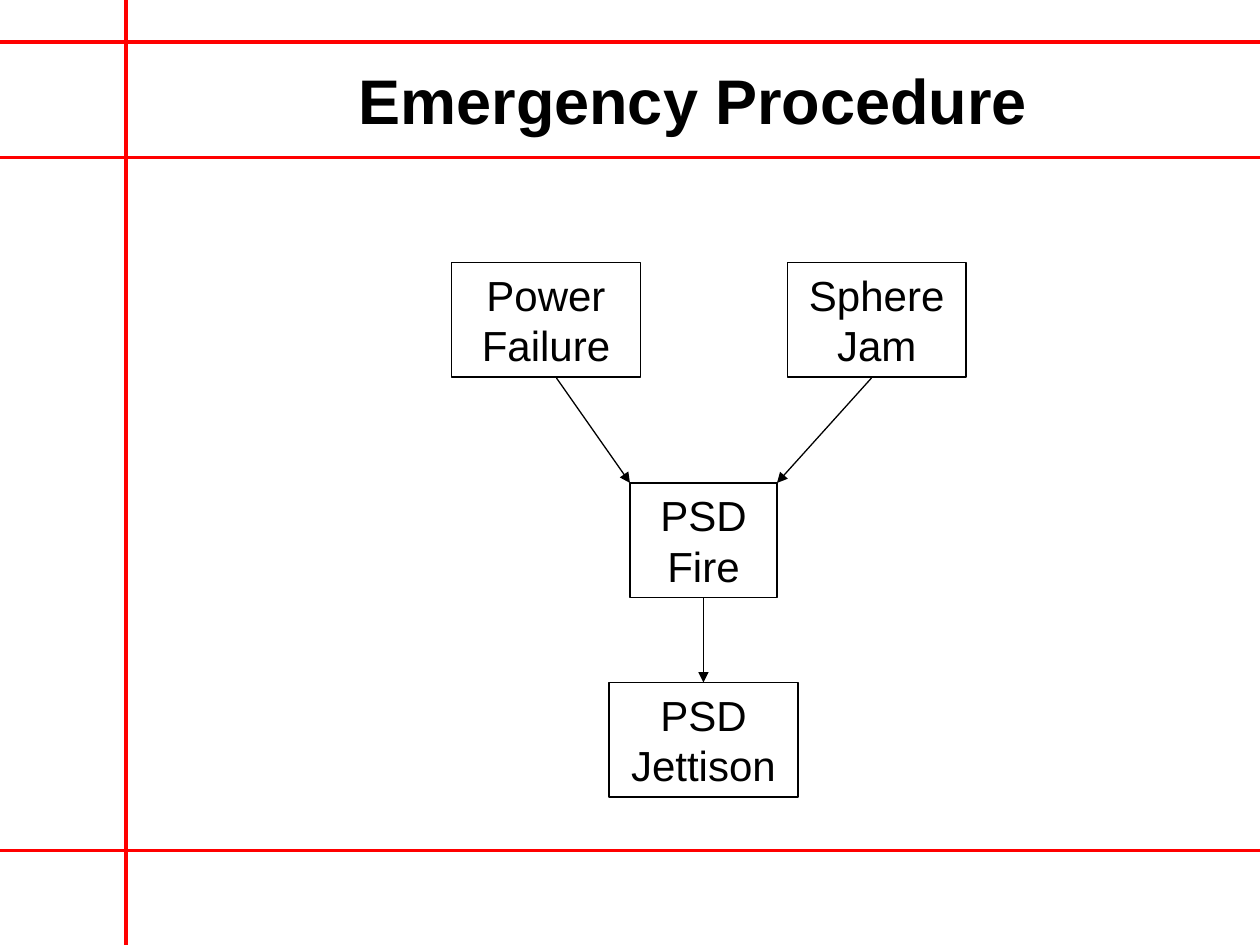
"""Build the Emergency Procedure flowchart slide."""
from lxml.etree import SubElement
from pptx import Presentation
from pptx.dml.color import RGBColor
from pptx.enum.shapes import MSO_CONNECTOR as Connector, MSO_SHAPE as Shape
from pptx.enum.text import MSO_ANCHOR as Anchor, MSO_AUTO_SIZE as AutoSize, PP_ALIGN as Align
from pptx.oxml.ns import qn
from pptx.util import Inches, Pt

THEME = {
    "ink": RGBColor(0, 0, 0),
    "rule": RGBColor(255, 0, 0),
    "title": {"name": "Arial", "size": Pt(36), "bold": True},
    "label": {"name": "Arial", "size": Pt(24), "bold": False},
    "leading": Pt(29),
}
COLUMNS, ROWS = 120, 90

deck = Presentation()
deck.slide_width, deck.slide_height = Inches(10), Inches(7.5)
CELL = deck.slide_width // COLUMNS
page = deck.slides.add_slide(deck.slide_layouts[5])


def add_line(start, end, color, width):
    line = page.shapes.add_connector(
        Connector.STRAIGHT, *(round(CELL * step) for step in (*start, *end)))
    line.line.color.rgb = color
    line.line.width = Pt(width)
    SubElement(line._element.spPr, qn("a:effectLst"))
    return line


def write_text(box, text, style, frame_format, para_format):
    frame = box.text_frame
    para = frame.paragraphs[0]
    span = para.add_run()
    span.text = text
    span.font.color.rgb = THEME["ink"]
    for target, values in ((frame, frame_format), (para, para_format), (span.font, style)):
        for name, value in values.items():
            setattr(target, name, value)


for row in (15, 81, 4):
    add_line((0, row), (COLUMNS, row), THEME["rule"], 2.25)
add_line((12, ROWS), (12, 0), THEME["rule"], 2.25)

title = page.shapes.title
title.left, title.top, title.width, title.height = (CELL * step for step in (12, 4, 108, 11))
write_text(title, "Emergency Procedure", THEME["title"],
           {"vertical_anchor": Anchor.MIDDLE, "auto_size": AutoSize.NONE, "word_wrap": True},
           {"alignment": Align.CENTER})

steps = {}
for text, column, row, width in (
    ("Power Failure", 43, 25, 18),
    ("Sphere Jam", 75, 25, 17),
    ("PSD Fire", 60, 46, 14),
    ("PSD Jettison", 58, 65, 18),
):
    box = page.shapes.add_shape(
        Shape.RECTANGLE, CELL * column, CELL * row, CELL * width, Inches(0.91))
    box.shadow.inherit = False
    box.fill.background()
    box.line.color.rgb = THEME["ink"]
    box.line.width = Pt(1)
    write_text(box, text, THEME["label"],
               {"vertical_anchor": Anchor.TOP, "auto_size": AutoSize.SHAPE_TO_FIT_TEXT,
                "word_wrap": True},
               {"alignment": Align.CENTER, "line_spacing": THEME["leading"]})
    steps[text] = box

arrows = [
    add_line(start, end, THEME["ink"], 0.75)
    for start, end in (((53, 36), (60, 46)), ((83, 36), (74, 46)), ((67, 57), (67, 65)))
]
for arrow in arrows:
    SubElement(arrow.line._get_or_add_ln(), qn("a:tailEnd"), type="triangle")
arrows[-1].begin_connect(steps["PSD Fire"], 2)
arrows[-1].end_connect(steps["PSD Jettison"], 0)

deck.save("out.pptx")
